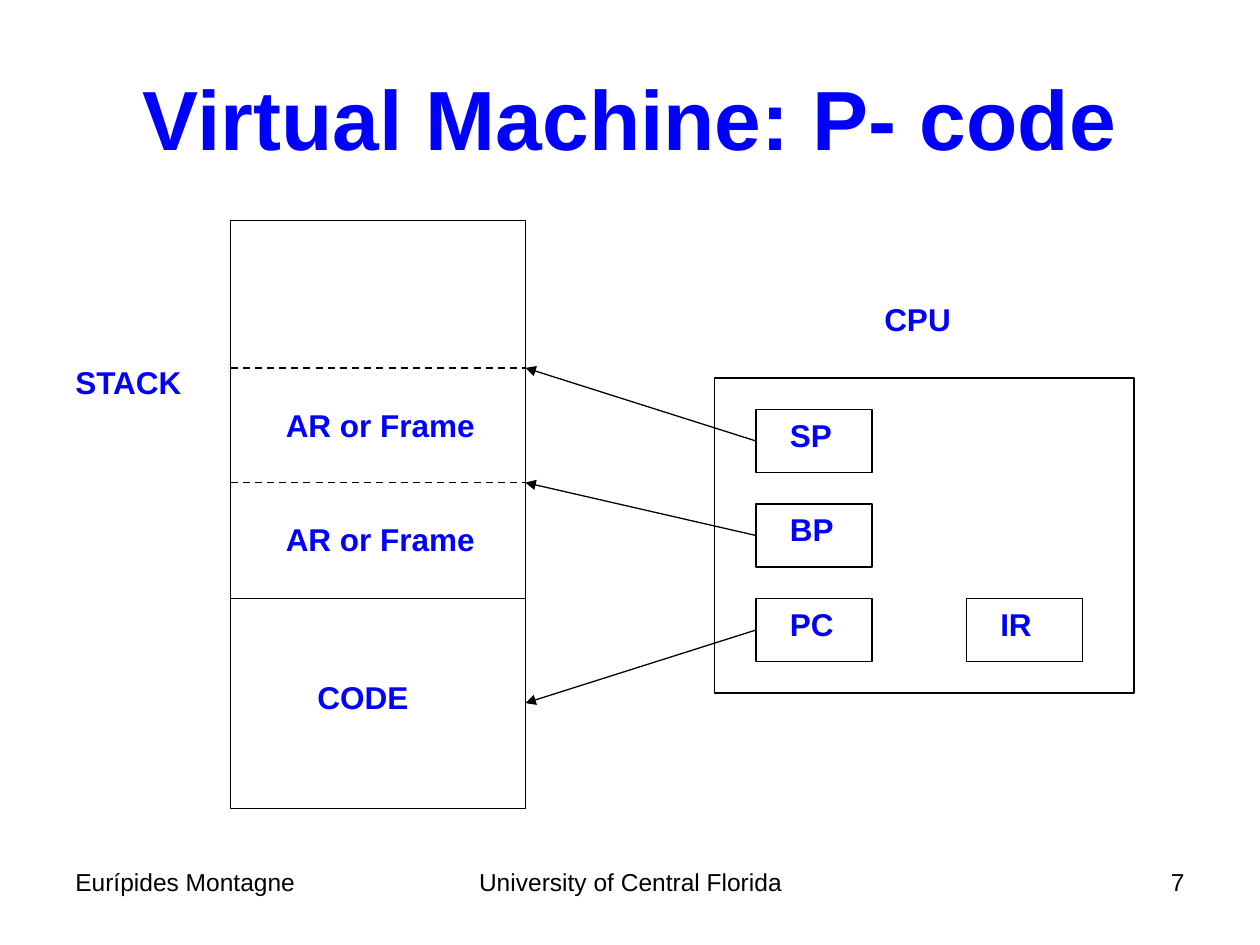
from dataclasses import dataclass

from lxml import etree
from pptx import Presentation
from pptx import util as u
from pptx.dml.color import RGBColor
from pptx.enum import dml, shapes, text
from pptx.oxml.ns import qn


@dataclass(frozen=True)
class Theme:
    font: str = "Arial"
    accent: RGBColor = RGBColor(0x00, 0x00, 0xFF)
    ink: RGBColor = RGBColor(0x00, 0x00, 0x00)
    title: int = 48
    label: int = 18
    footer: int = 14
    thin: float = 0.75
    dash: float = 1


@dataclass(frozen=True)
class Box:
    left: float
    top: float
    width: float
    height: float


@dataclass(frozen=True)
class Register:
    name: str
    left: float
    top: float
    text_width: float
    target: float | None = None  # height on the stack it points at


T = Theme()
ALIGN = text.PP_ALIGN

STACK = Box(1.83, 1.75, 2.34, 4.67)
CPU = Box(5.67, 3, 3.33, 2.5)
STACK_RIGHT = STACK.left + STACK.width
REG_W, REG_H = 0.92, 0.5
FRAME_TOP, FRAME_BASE, CODE_TOP = 2.92, 3.83, 4.75

REGISTERS = [
    Register("SP", 6, 3.25, 0.55, FRAME_TOP),
    Register("BP", 6, 4, 0.55, FRAME_BASE),
    Register("PC", 6, 4.75, 0.55, 5.58),
    Register("IR", 7.67, 4.75, 0.45),
]
LABELS = [
    ("STACK", Box(0.5, 2.83, 1.06, 0.4)),
    ("CPU", Box(6.92, 2.33, 0.73, 0.4)),
    ("CODE", Box(2.42, 5.33, 0.92, 0.4)),
] + [("AR or Frame", Box(2.17, y + 0.25, 1.7, 0.4)) for y in (FRAME_TOP, FRAME_BASE)]
FOOTERS = [
    ("Eurípides Montagne", Box(0.5, 6.83, 2.33, 0.52), ALIGN.LEFT),
    ("University of Central Florida", Box(3.42, 6.83, 3.17, 0.52), ALIGN.CENTER),
    ("7", Box(7.17, 6.83, 2.33, 0.52), ALIGN.RIGHT),
]


def inches(b: Box) -> list[u.Length]:
    return [u.Inches(v) for v in (b.left, b.top, b.width, b.height)]


def write(tf, words: str, *, size: int = T.label, color: RGBColor = T.accent,
          bold: bool = True, align=ALIGN.LEFT, wrap: bool = False) -> None:
    tf.word_wrap = wrap
    if not wrap:  # labels grow with their text and stay on one line
        tf.auto_size = text.MSO_AUTO_SIZE.SHAPE_TO_FIT_TEXT
    p = tf.paragraphs[0]
    p.alignment = align
    r = p.add_run()
    r.text = words
    r.font.name, r.font.size, r.font.bold = T.font, u.Pt(size), bold
    r.font.color.rgb = color


def add_text(s, words: str, box: Box, **fmt) -> None:
    write(s.shapes.add_textbox(*inches(box)).text_frame, words, **fmt)


def add_rect(s, box: Box) -> None:
    sp = s.shapes.add_shape(shapes.MSO_SHAPE.RECTANGLE, *inches(box))
    sp.shadow.inherit = False
    sp.fill.background()
    sp.line.color.rgb = T.ink
    sp.line.width = u.Pt(T.thin)


def add_line(s, x1: float, y1: float, x2: float, y2: float, *,
             dashed: bool = False, arrow: bool = False) -> None:
    ends = [u.Inches(v) for v in (x1, y1, x2, y2)]
    sp = s.shapes.add_connector(shapes.MSO_CONNECTOR.STRAIGHT, *ends)
    sp.line.color.rgb = T.ink
    sp.line.width = u.Pt(T.dash if dashed else T.thin)
    if dashed:
        sp.line.dash_style = dml.MSO_LINE.DASH
    if arrow:
        etree.SubElement(sp.line._get_or_add_ln(), qn("a:tailEnd"), type="triangle")
    etree.SubElement(sp._element.spPr, qn("a:effectLst"))


def add_register(s, reg: Register) -> None:
    add_rect(s, Box(reg.left, reg.top, REG_W, REG_H))
    add_text(s, reg.name, Box(reg.left + 0.17, reg.top, reg.text_width, 0.4))
    if reg.target is not None:
        add_line(s, reg.left, reg.top + REG_H / 2, STACK_RIGHT, reg.target, arrow=True)


def main() -> None:
    prs = Presentation()
    prs.slide_width, prs.slide_height = u.Inches(10), u.Inches(7.5)
    s = prs.slides.add_slide(prs.slide_layouts[5])

    # Title
    title = s.shapes.title
    title.left, title.top, title.width, title.height = inches(Box(0.5, 0.3, 9, 1.25))
    title.text_frame.vertical_anchor = text.MSO_ANCHOR.MIDDLE
    write(title.text_frame, "Virtual Machine: P- code", size=T.title,
          align=ALIGN.CENTER, wrap=True)

    # Stack memory and its divisions
    add_rect(s, STACK)
    for y, dashed in ((FRAME_TOP, True), (FRAME_BASE, True), (CODE_TOP, False)):
        add_line(s, STACK.left, y, STACK_RIGHT, y, dashed=dashed)

    # CPU, registers and pointers
    add_rect(s, CPU)
    for reg in REGISTERS:
        add_register(s, reg)

    # Labels and footer
    for words, box in LABELS:
        add_text(s, words, box)
    for words, box, align in FOOTERS:
        add_text(s, words, box, size=T.footer, color=T.ink, bold=False,
                 align=align, wrap=True)

    prs.save("out.pptx")


if __name__ == "__main__":
    main()
